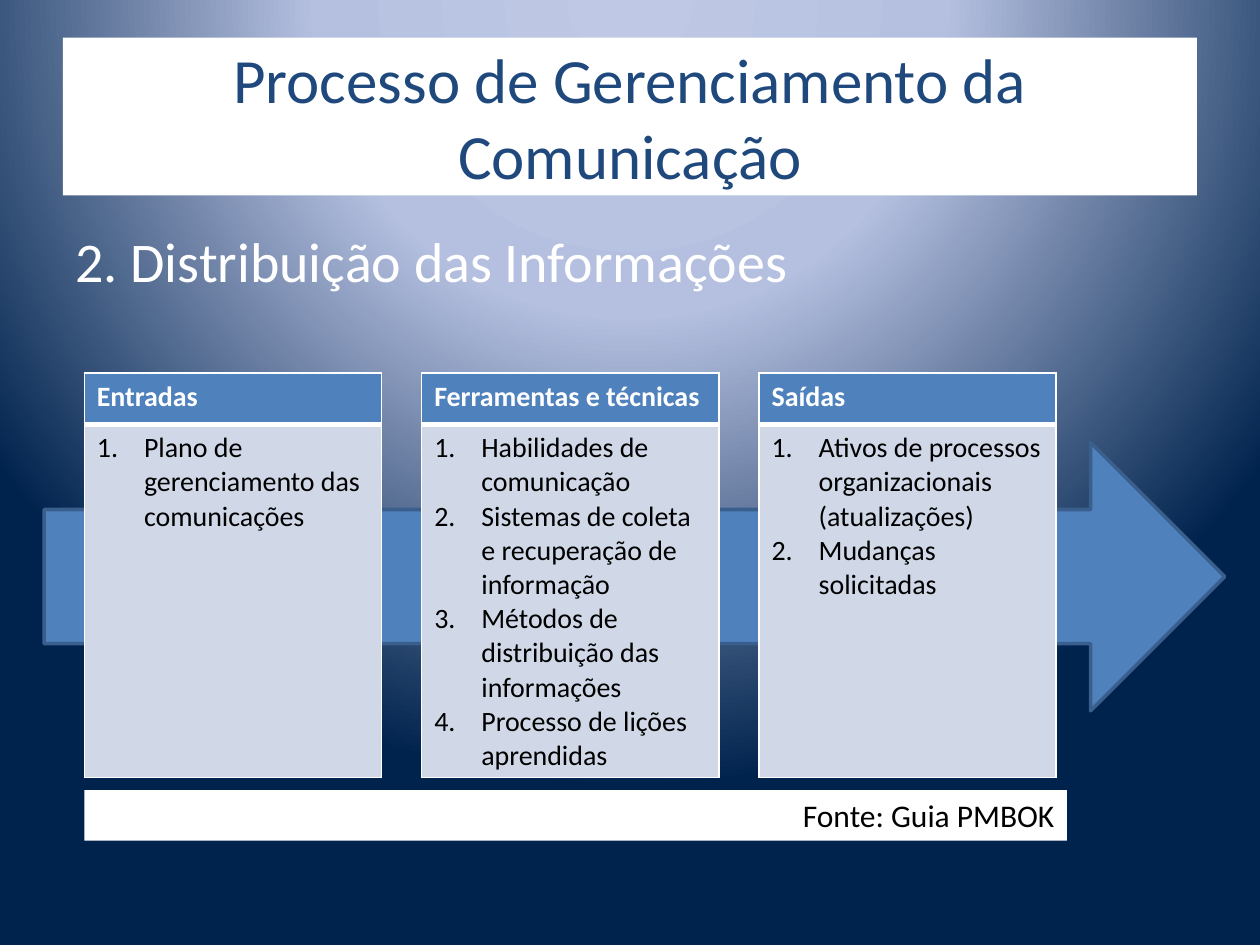
from lxml import etree
from pptx import Presentation
from pptx.dml.color import RGBColor
from pptx.enum import shapes, text
from pptx.oxml import parse_xml
from pptx.oxml.ns import nsdecls, qn
from pptx.util import Cm, Pt

# Content
TITLE = "Processo de Gerenciamento da Comunicação"
SUBTITLE = "2. Distribuição das Informações"
STAGES = [
    ("Entradas", ["Plano de gerenciamento das comunicações"]),
    ("Ferramentas e técnicas", [
        "Habilidades de comunicação",
        "Sistemas de coleta e recuperação de informação",
        "Métodos de distribuição das informações",
        "Processo de lições aprendidas",
    ]),
    ("Saídas", [
        "Ativos de processos organizacionais (atualizações)",
        "Mudanças solicitadas",
    ]),
]
SOURCE = "Fonte: Guia PMBOK"


class Theme:
    font = "Calibri"
    white, black, navy = "FFFFFF", "000000", "1F497D"
    accent, accent_line, cell = "4F81BD", "3A5F8C", "D0D8E8"
    glow = [(0, "BFC9E5"), (40, "B5C0E0"), (100, "00234D")]
    title, subtitle, source, table = 36, 32, 18, 16


# Layout, in cm
STAGE_LEFT, STAGE_TOP, STAGE_WIDTH, STAGE_STEP = 1.7, 7.52, 5.99, 6.8
HEADER_HEIGHT, BODY_HEIGHT = 1.04, 7.11
NUMBER_INDENT = 0.95


def rgb(color):
    return RGBColor.from_string(color)


def paint(target, color):
    target.fill.solid()
    target.fill.fore_color.rgb = rgb(color)


def add_run(paragraph, words, size, color, bold=False):
    run = paragraph.add_run()
    run.text = words
    run.font.name, run.font.size, run.font.bold = Theme.font, Pt(size), bold
    run.font.color.rgb = rgb(color)


def add_text(slide, box, words, size, color, align, anchor, fill=None):
    area = slide.shapes.add_textbox(*map(Cm, box))
    if fill:
        paint(area, fill)
    frame = area.text_frame
    frame.word_wrap = True
    frame.vertical_anchor = anchor
    paragraph = frame.paragraphs[0]
    paragraph.alignment = align
    add_run(paragraph, words, size, color)


def paint_background(slide):
    slide.background.fill.gradient()
    stops = "".join(
        f'<a:gs pos="{at * 1000}"><a:srgbClr val="{color}"/></a:gs>'
        for at, color in Theme.glow)
    gradient = parse_xml(
        f'<a:gradFill {nsdecls("a")} rotWithShape="1"><a:gsLst>{stops}</a:gsLst>'
        '<a:path path="circle"><a:fillToRect l="50000" t="-80000" r="50000" b="180000"/>'
        '</a:path></a:gradFill>')
    old = next(slide.element.iter(qn("a:gradFill")))
    old.getparent().replace(old, gradient)


def style_cell(cell, color, top, bottom):
    properties = cell._tc.get_or_add_tcPr()
    for side, width in (("L", 1), ("R", 1), ("T", top), ("B", bottom)):
        properties.append(parse_xml(
            f'<a:ln{side} {nsdecls("a")} w="{Pt(width)}"><a:solidFill>'
            f'<a:srgbClr val="{Theme.white}"/></a:solidFill></a:ln{side}>'))
    paint(cell, color)


def number(paragraph):
    properties = paragraph._p.get_or_add_pPr()
    properties.set("marL", str(Cm(NUMBER_INDENT)))
    properties.set("indent", str(-Cm(NUMBER_INDENT)))
    bullet = etree.SubElement(properties, qn("a:buAutoNum"))
    bullet.set("type", "arabicPeriod")


def add_stage(slide, left, heading, items):
    table = slide.shapes.add_table(
        2, 1, Cm(left), Cm(STAGE_TOP), Cm(STAGE_WIDTH),
        Cm(HEADER_HEIGHT + BODY_HEIGHT)).table
    table.rows[0].height, table.rows[1].height = Cm(HEADER_HEIGHT), Cm(BODY_HEIGHT)
    header, body = table.cell(0, 0), table.cell(1, 0)
    style_cell(header, Theme.accent, 1, 3)
    style_cell(body, Theme.cell, 3, 1)
    add_run(header.text_frame.paragraphs[0], heading, Theme.table, Theme.white, True)
    frame = body.text_frame
    for index, item in enumerate(items):
        paragraph = frame.add_paragraph() if index else frame.paragraphs[0]
        number(paragraph)
        add_run(paragraph, item, Theme.table, Theme.black)


def main():
    deck = Presentation()
    deck.slide_width, deck.slide_height = Cm(25.4), Cm(19.05)
    slide = deck.slides.add_slide(deck.slide_layouts[6])
    paint_background(slide)
    align, anchor = text.PP_ALIGN, text.MSO_ANCHOR

    # Headings
    add_text(slide, (1.27, 0.76, 22.86, 3.18), TITLE, Theme.title, Theme.navy,
             align.CENTER, anchor.MIDDLE, Theme.white)
    add_text(slide, (1.27, 4.45, 22.86, 1.68), SUBTITLE, Theme.subtitle, Theme.white,
             align.LEFT, anchor.TOP)

    # Flow arrow behind the stages
    arrow = slide.shapes.add_shape(
        shapes.MSO_SHAPE.RIGHT_ARROW, Cm(0.89), Cm(8.92), Cm(23.8), Cm(5.41))
    arrow.shadow.inherit = False
    paint(arrow, Theme.accent)
    arrow.line.color.rgb, arrow.line.width = rgb(Theme.accent_line), Pt(2)

    # Stages
    for index, (heading, items) in enumerate(STAGES):
        add_stage(slide, STAGE_LEFT + index * STAGE_STEP, heading, items)

    # Source
    add_text(slide, (STAGE_LEFT, 15.93, 19.81, 1.02), SOURCE, Theme.source, Theme.black,
             align.RIGHT, anchor.TOP, Theme.white)
    deck.save("out.pptx")


if __name__ == "__main__":
    main()
